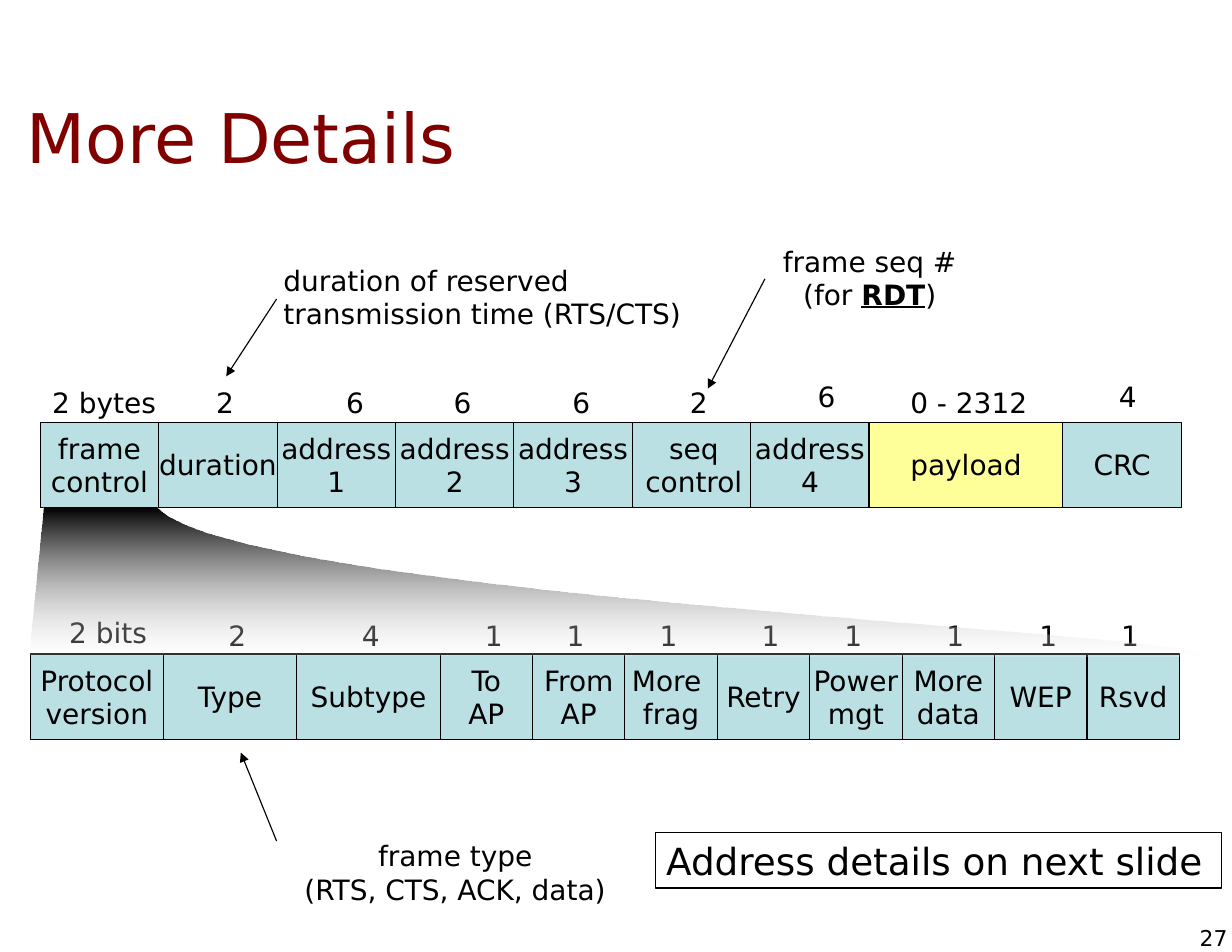
from lxml import etree
from pptx import Presentation
from pptx.dml.color import RGBColor
from pptx.enum.shapes import MSO_CONNECTOR, MSO_SHAPE
from pptx.enum.text import MSO_ANCHOR as ANCHOR, MSO_AUTO_SIZE as AUTO, PP_ALIGN as ALIGN
from pptx.oxml.ns import qn
from pptx.util import Inches, Pt


def rgb(value):
    return RGBColor.from_string(value)


def bezier(p0, p1, p2, p3, steps=60):
    """Points along a cubic curve, without its start."""
    points = []
    for i in range(1, steps + 1):
        t = i / steps
        u = 1 - t
        points.append(tuple(u**3 * a + 3 * u * u * t * b + 3 * u * t * t * c + t**3 * d
                            for a, b, c, d in zip(p0, p1, p2, p3)))
    return points


class Deck:
    FONT = "DejaVu Sans"
    BLACK, TITLE, FIELD, PAYLOAD = "000000", "800000", "BBE0E3", "FFFF99"

    def __init__(self, width, height):
        self.prs = Presentation()
        self.prs.slide_width, self.prs.slide_height = Inches(width), Inches(height)
        self.slide = self.prs.slides.add_slide(self.prs.slide_layouts[5])

    def set_text(self, tf, text, size=18, color=BLACK, align=ALIGN.CENTER, strong=None):
        """Fill a frame line by line; the word given as strong is bold and underlined."""
        for i, line in enumerate(text.split("\n")):
            p = tf.add_paragraph() if i else tf.paragraphs[0]
            p.alignment = align
            p.font.name, p.font.size = self.FONT, Pt(size)
            p.font.color.rgb = rgb(color)
            before, found, after = line.partition(strong) if strong else (line, "", "")
            for part in filter(None, (before, found, after)):
                r = p.add_run()
                r.text = part
                if part == strong:
                    r.font.bold = r.font.underline = True

    def title(self, text, x, y, w, h):
        sp = self.slide.shapes.title
        sp.left, sp.top, sp.width, sp.height = map(Inches, (x, y, w, h))
        tf = sp.text_frame
        tf.auto_size, tf.vertical_anchor = AUTO.NONE, ANCHOR.TOP
        tf.margin_left, tf.margin_top = Inches(0.11), Inches(0.1)
        self.set_text(tf, text, 44, self.TITLE, ALIGN.LEFT)

    def box(self, text, x, y, w, h, fill=None, **style):
        sp = self.slide.shapes.add_shape(MSO_SHAPE.RECTANGLE, *map(Inches, (x, y, w, h)))
        sp.shadow.inherit = False
        if fill:
            sp.fill.solid()
            sp.fill.fore_color.rgb = rgb(fill)
        else:
            sp.fill.background()
        sp.line.color.rgb = rgb(self.BLACK)
        sp.line.width = Pt(0.75)
        tf = sp.text_frame
        tf.word_wrap, tf.vertical_anchor = False, ANCHOR.MIDDLE
        if text:
            self.set_text(tf, text, **style)

    def label(self, text, x, y, w, h=0.4, inset=(0.1, 0.05), anchor=ANCHOR.TOP, **style):
        tf = self.slide.shapes.add_textbox(*map(Inches, (x, y, w, h))).text_frame
        tf.word_wrap, tf.auto_size, tf.vertical_anchor = False, AUTO.SHAPE_TO_FIT_TEXT, anchor
        tf.margin_left = tf.margin_right = Inches(inset[0])
        tf.margin_top = tf.margin_bottom = Inches(inset[1])
        self.set_text(tf, text, **style)

    def callout(self, text, x, y, w, **style):
        self.label(text, x, y, w, 0.72, inset=(0.11, 0.06), **style)

    def arrow(self, *ends):
        cn = self.slide.shapes.add_connector(MSO_CONNECTOR.STRAIGHT, *map(Inches, ends))
        cn.line.color.rgb = rgb(self.BLACK)
        cn.line.width = Pt(0.75)
        props = cn.element.spPr
        etree.SubElement(props.find(qn("a:ln")), qn("a:tailEnd"), type="triangle")
        etree.SubElement(props, qn("a:effectLst"))

    def fading_shape(self, points, end_alpha):
        """Outline filled from black at the top to see-through white below."""
        start, *rest = [(Inches(x), Inches(y)) for x, y in points]
        builder = self.slide.shapes.build_freeform(*start)
        builder.add_line_segments(rest, close=True)
        sp = builder.convert_to_shape()
        sp.shadow.inherit = False
        sp.line.fill.background()
        sp.fill.gradient()
        sp.fill.gradient_angle = 270
        first, last = sp.fill.gradient_stops
        first.position, last.position = 0, 1
        first.color.rgb, last.color.rgb = rgb(self.BLACK), rgb("FFFFFF")
        white = sp.element.spPr.findall(".//" + qn("a:srgbClr"))[-1]
        etree.SubElement(white, qn("a:alpha"), val=str(end_alpha * 1000))

    def field_row(self, x, y, fields):
        for text, width, fill in fields:
            self.box(text, x, y, width, 0.76, fill)
            x += width


def main():
    deck = Deck(11, 8.5)
    deck.title("More Details", 0.13, 0.75, 9.35, 0.99)

    # Frame fields, with their sizes in bytes
    column = (7.76 - 0.36) / 7
    names = ["frame\ncontrol", "duration", "address\n1", "address\n2", "address\n3", "",
             "address\n4"]
    frame = [(name, column, deck.FIELD) for name in names]
    frame += [("payload", 1.73, deck.PAYLOAD), ("CRC", 1.06, deck.FIELD)]
    deck.field_row(0.36, 3.77, frame)
    deck.label("seq\ncontrol", 5.63, 3.8, 1.13, 0.71)
    deck.label("2 bytes", 0.36, 3.39, 1.14)
    deck.label("0 - 2312", 7.97, 3.39, 1.36)
    for text, x, y in [("2", 1.82, 3.39), ("6", 2.98, 3.39), ("6", 3.94, 3.39), ("6", 5, 3.39),
                       ("2", 6.05, 3.39), ("6", 7.19, 3.34), ("4", 9.88, 3.34)]:
        deck.label(text, x, y, 0.38)

    # Frame control fields, with their sizes in bits
    flag = (10.53 - 3.93) / 8
    control = [("Protocol\nversion", 1.19), ("Type", 1.19), ("Subtype", 1.28)]
    control += [(name, flag) for name in ("To\nAP", "From\nAP", "More \nfrag", "Retry",
                                          "Power\nmgt", "More\ndata", "WEP", "Rsvd")]
    deck.field_row(0.27, 5.84, [(name, width, deck.FIELD) for name, width in control])
    deck.label("2 bits", 0.51, 5.45, 0.91)
    bit_places = (1.94, 3.13, 4.23, 4.96, 5.79, 6.7, 7.44, 8.35, 9.18, 9.91)
    for text, x in zip("2411111111", bit_places):
        deck.label(text, x, 5.47, 0.36)

    corner = (10.76, 5.86)
    curve = bezier(corner, (10.95, 5.64), (2.16, 5.34), (1.4, 4.53))
    deck.fading_shape([(0.39, 4.53), (0.26, 5.84), corner, *curve], end_alpha=18)

    deck.callout("duration of reserved\ntransmission time (RTS/CTS)", 2.42, 2.29, 3.91,
                 align=ALIGN.LEFT)
    deck.arrow(2.47, 2.67, 2.02, 3.36)
    deck.callout("frame seq #\n(for RDT)", 6.87, 2.12, 1.79, strong="RDT")
    deck.arrow(6.83, 2.49, 6.32, 3.47)
    deck.callout("frame type\n(RTS, CTS, ACK, data)", 2.53, 7.43, 3.07)
    deck.arrow(2.47, 7.51, 2.15, 6.72)

    deck.label("27", 10.62, 8.25, 0.34, 0.24, inset=(0, 0), anchor=ANCHOR.MIDDLE,
               size=14, align=ALIGN.RIGHT)
    deck.box("Address details on next slide", 5.85, 7.43, 5.06, 0.5, size=24, align=ALIGN.LEFT)
    deck.prs.save("out.pptx")


if __name__ == "__main__":
    main()
